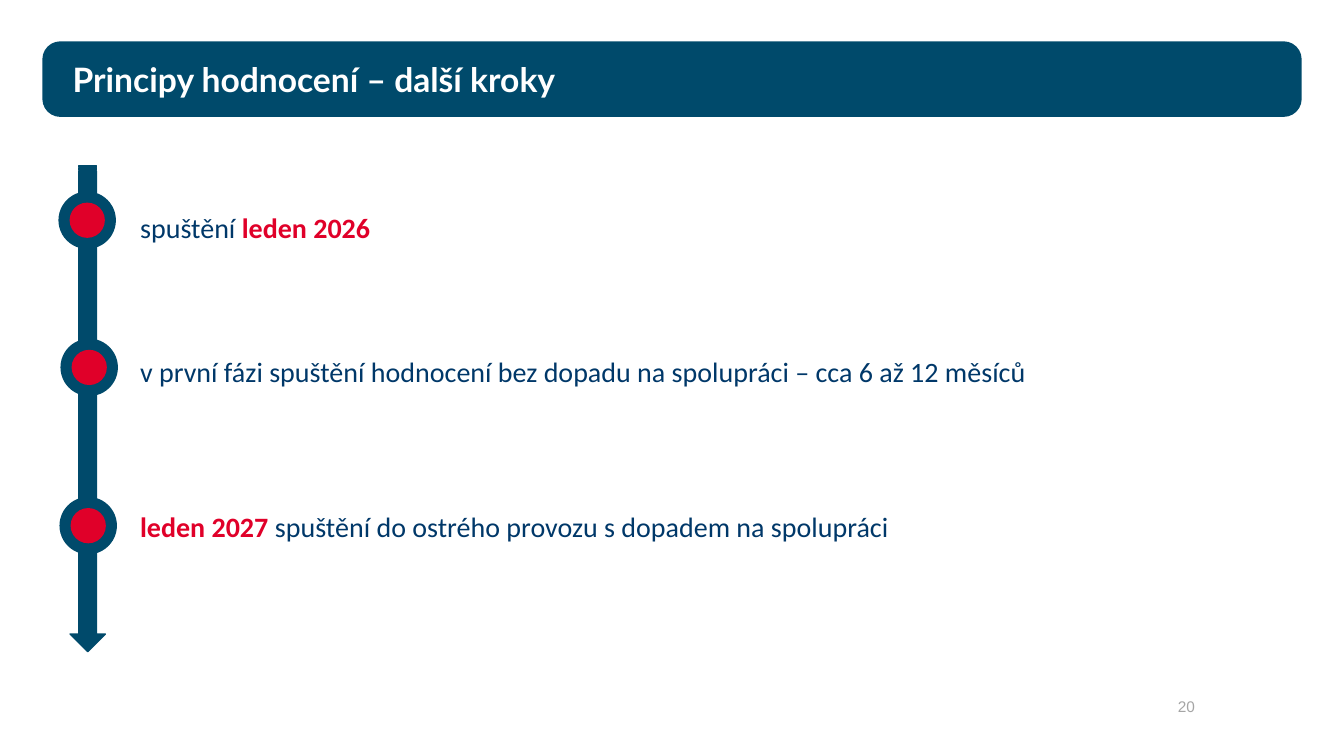
from dataclasses import dataclass

from pptx import Presentation
from pptx.dml.color import RGBColor
from pptx.enum.shapes import MSO_SHAPE
from pptx.enum.text import MSO_ANCHOR, MSO_AUTO_SIZE, PP_ALIGN
from pptx.shapes.autoshape import Shape
from pptx.slide import Slide
from pptx.util import Inches, Pt

TEAL = "004A6B"
NAVY = "003869"
RED = "E00029"
WHITE = "FFFFFF"
GREY = "A5A5A5"

RING_SIZE = 0.57
DOT_SIZE = 0.35


@dataclass(frozen=True)
class Span:
    text: str
    highlighted: bool = False


@dataclass(frozen=True)
class Milestone:
    ring_left: float
    ring_top: float
    label_top: float
    label_width: float
    spans: tuple[Span, ...]


MILESTONES = (
    Milestone(0.58, 1.9, 1.97, 7.78,
              (Span("spuštění "), Span("leden 2026", True))),
    Milestone(0.6, 3.36, 3.4, 10.49,
              (Span("v první fázi spuštění hodnocení bez dopadu na spolupráci"
                    " – cca 6 až 12 měsíců"),)),
    Milestone(0.59, 4.93, 4.94, 12.16,
              (Span("leden 2027 ", True),
               Span("spuštění do ostrého provozu s dopadem na spolupráci"))),
)


def rgb(color: str) -> RGBColor:
    return RGBColor.from_string(color)


def place(shape: Shape, left: float, top: float, width: float, height: float) -> None:
    shape.left, shape.top = Inches(left), Inches(top)
    shape.width, shape.height = Inches(width), Inches(height)


def add_filled(page: Slide, kind: MSO_SHAPE, left: float, top: float,
               width: float, height: float, color: str) -> Shape:
    shape = page.shapes.add_shape(
        kind, Inches(left), Inches(top), Inches(width), Inches(height))
    shape.shadow.inherit = False
    shape.fill.solid()
    shape.fill.fore_color.rgb = rgb(color)
    shape.line.fill.background()
    return shape


def add_title(page: Slide, text: str) -> None:
    title = page.shapes.title
    place(title, 0.62, 0.53, 9.09, 0.57)
    frame = title.text_frame
    frame.text = text
    frame.auto_size = MSO_AUTO_SIZE.NONE
    frame.vertical_anchor = MSO_ANCHOR.TOP
    para = frame.paragraphs[0]
    para.alignment = PP_ALIGN.LEFT
    para.font.name = "Lato"
    para.font.size = Pt(24)
    para.font.bold = True
    para.font.color.rgb = rgb(WHITE)


def add_timeline(page: Slide) -> None:
    arrow = add_filled(page, MSO_SHAPE.STRIPED_RIGHT_ARROW,
                       -1.54, 3.88, 4.82, 0.35, TEAL)
    arrow.rotation = 90
    arrow.line.color.rgb = rgb(TEAL)
    arrow.line.width = Pt(1)


def add_milestone(page: Slide, milestone: Milestone) -> None:
    # Ring with a centred dot
    inset = (RING_SIZE - DOT_SIZE) / 2
    add_filled(page, MSO_SHAPE.OVAL, milestone.ring_left, milestone.ring_top,
               RING_SIZE, RING_SIZE, TEAL)
    add_filled(page, MSO_SHAPE.OVAL, milestone.ring_left + inset,
               milestone.ring_top + inset, DOT_SIZE, DOT_SIZE, RED)

    # Label
    box = page.shapes.add_textbox(
        Inches(1.18), Inches(milestone.label_top),
        Inches(milestone.label_width), Inches(0.48))
    frame = box.text_frame
    frame.word_wrap = True
    frame.auto_size = MSO_AUTO_SIZE.SHAPE_TO_FIT_TEXT
    frame.margin_left = Inches(0.21)
    para = frame.paragraphs[0]
    para.alignment = PP_ALIGN.JUSTIFY
    para.line_spacing = 1.2
    para.font.name = "Calibri"
    para.font.size = Pt(20)
    for span in milestone.spans:
        run = para.add_run()
        run.text = span.text
        run.font.bold = span.highlighted
        run.font.color.rgb = rgb(RED if span.highlighted else NAVY)


def add_page_number(page: Slide, number: int) -> None:
    box = page.shapes.add_textbox(
        Inches(10.12), Inches(6.81), Inches(1.83), Inches(0.4))
    frame = box.text_frame
    frame.word_wrap = True
    frame.vertical_anchor = MSO_ANCHOR.MIDDLE
    frame.text = str(number)
    para = frame.paragraphs[0]
    para.alignment = PP_ALIGN.RIGHT
    para.font.name = "Arial"
    para.font.size = Pt(11)
    para.font.color.rgb = rgb(GREY)


def main() -> None:
    deck = Presentation()
    deck.slide_width, deck.slide_height = Inches(13.33), Inches(7.5)
    page = deck.slides.add_slide(deck.slide_layouts.get_by_name("Title Only"))

    # Header: the band goes behind the title
    band = add_filled(page, MSO_SHAPE.ROUNDED_RECTANGLE,
                      0.42, 0.41, 12.49, 0.75, TEAL)
    band.adjustments[0] = 0.238
    title_element = page.shapes.title.element
    title_element.addprevious(band.element)
    add_title(page, "Principy hodnocení – další kroky")

    # Timeline
    add_timeline(page)
    for milestone in MILESTONES:
        add_milestone(page, milestone)

    # Footer
    add_page_number(page, 20)
    deck.save("out.pptx")


if __name__ == "__main__":
    main()
